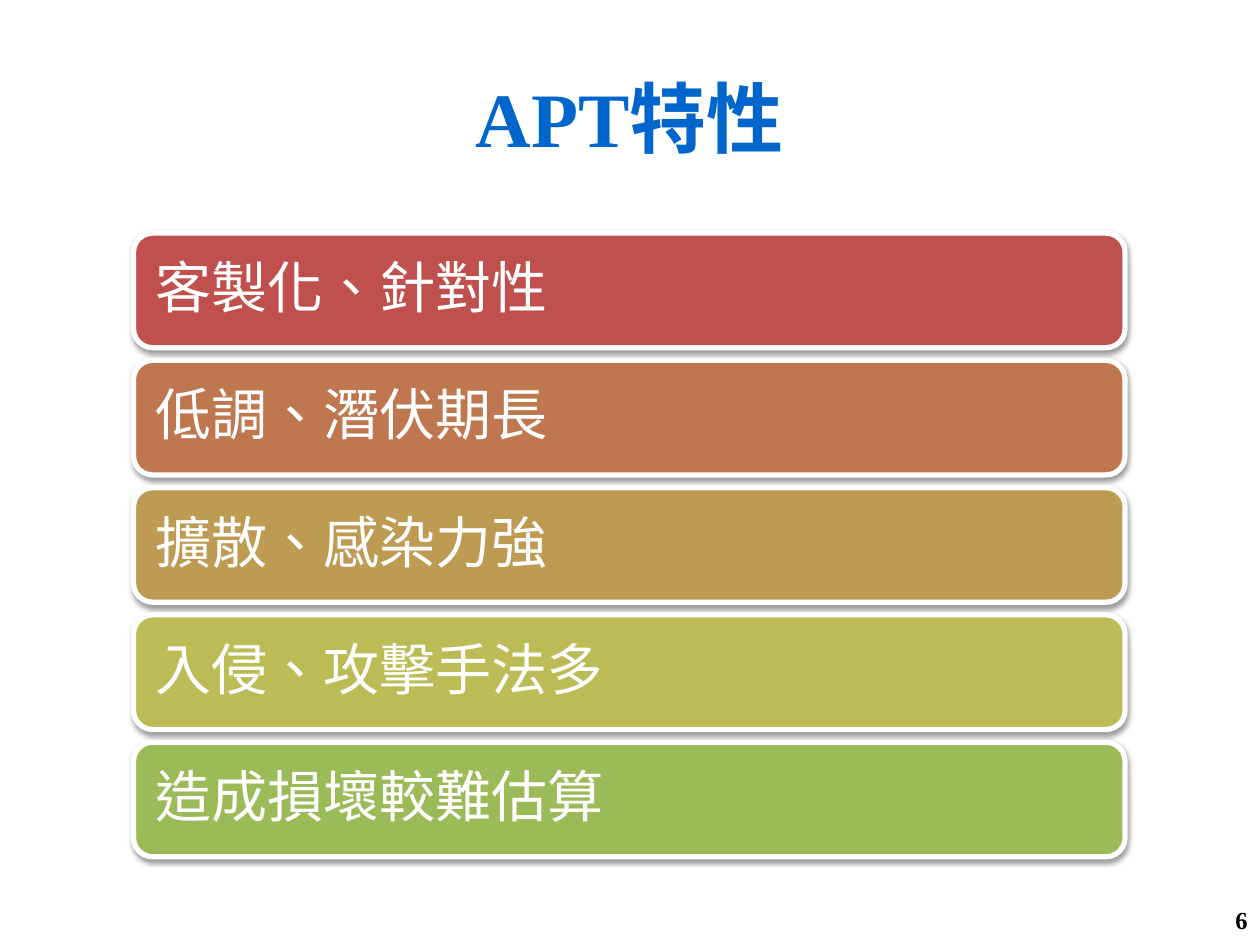
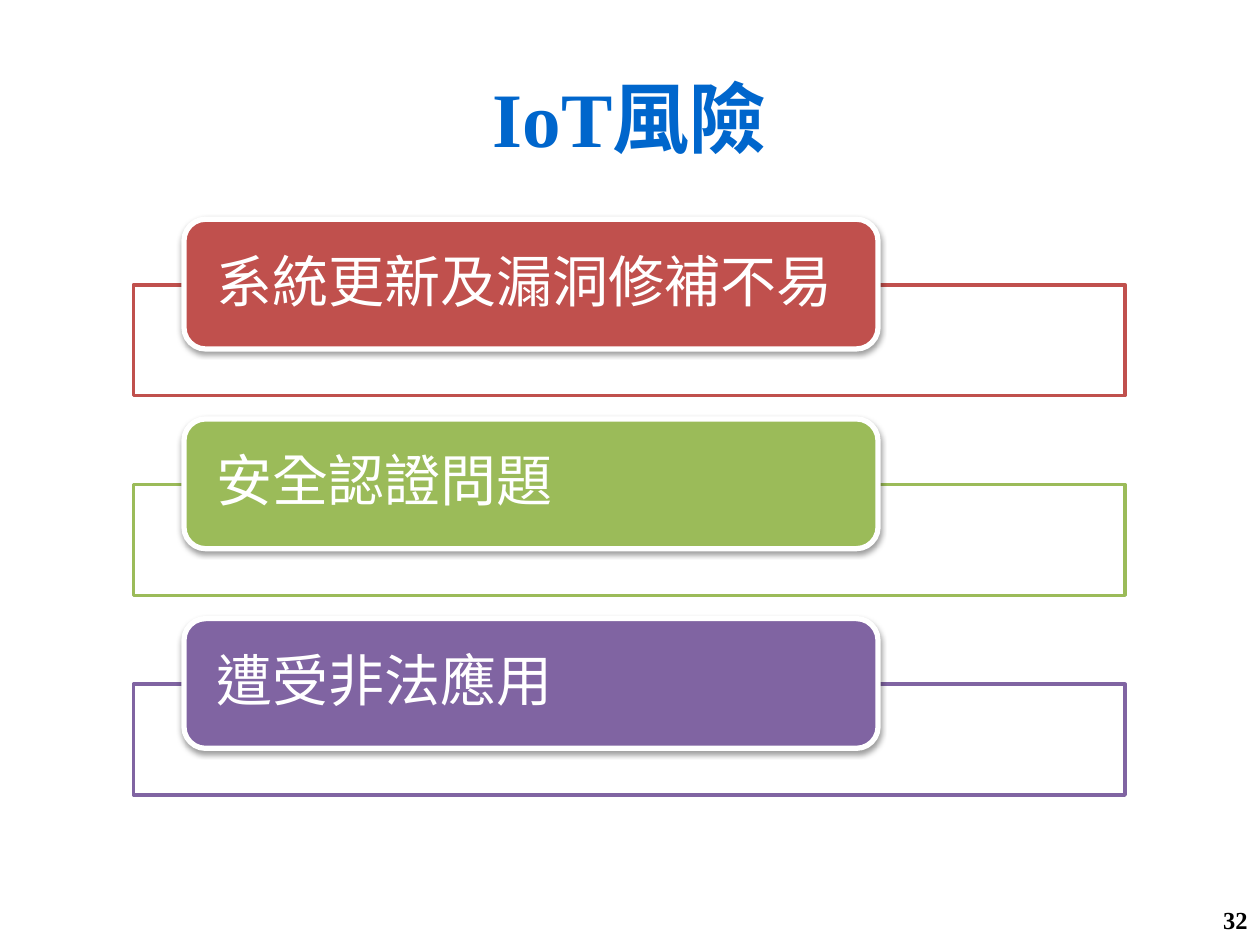
from lxml import etree
from pptx import Presentation
from pptx.dml.color import RGBColor
from pptx.enum.lang import MSO_LANGUAGE_ID
from pptx.enum.shapes import MSO_SHAPE
from pptx.enum.text import MSO_ANCHOR, PP_ALIGN
from pptx.oxml.ns import qn
from pptx.util import Inches, Pt

RECTANGLE = MSO_SHAPE.RECTANGLE
ROUNDED = MSO_SHAPE.ROUNDED_RECTANGLE
LEFT, CENTER, RIGHT = PP_ALIGN.LEFT, PP_ALIGN.CENTER, PP_ALIGN.RIGHT
MIDDLE = MSO_ANCHOR.MIDDLE
CHINESE = MSO_LANGUAGE_ID.TRADITIONAL_CHINESE

FONT = "Times New Roman"
WHITE, BLACK, TITLE_BLUE = "FFFFFF", "000000", "0066CC"
RED, GREEN, PURPLE = "C0504D", "9BBB59", "8064A2"

# Boxes as left, top, width, height in inches
TITLE_BOX = (0.5, 0.3, 9, 1.25)
NUMBER_BOX = (7.67, 7.1, 2.33, 0.4)
TRAITS_BOX = (1.06, 1.85, 7.87, 4.95)
RISKS_BOX = (1.06, 1.74, 7.87, 4.57)

TRAITS = [
    ("客製化、針對性", RED),
    ("低調、潛伏期長", "BF7750"),
    ("擴散、感染力強", "BD9B53"),
    ("入侵、攻擊手法多", "BCBC56"),
    ("造成損壞較難估算", GREEN),
]
RISKS = [
    ("系統更新及漏洞修補不易", RED),
    ("安全認證問題", GREEN),
    ("遭受非法應用", PURPLE),
]


def color(value):
    return RGBColor.from_string(value)


def inches(box):
    return [Inches(length) for length in box]


def write(shape, text, size, text_color, alignment, bold=False, margins=(0.1, 0.05)):
    """Put one vertically centred line of text into a shape."""
    frame = shape.text_frame
    frame.text = text
    frame.word_wrap = True
    frame.vertical_anchor = MIDDLE
    frame.margin_left = frame.margin_right = Inches(margins[0])
    frame.margin_top = frame.margin_bottom = Inches(margins[1])
    paragraph = frame.paragraphs[0]
    paragraph.alignment = alignment
    font = paragraph.runs[0].font
    font.name, font.size, font.bold = FONT, Pt(size), bold
    font.color.rgb = color(text_color)
    font.language_id = CHINESE
    return paragraph


def add_box(slide, kind, box, fill, line, line_width):
    shape = slide.shapes.add_shape(kind, *inches(box))
    shape.shadow.inherit = False
    shape.fill.solid()
    shape.fill.fore_color.rgb = color(fill)
    shape.line.color.rgb = color(line)
    shape.line.width = Pt(line_width)
    return shape


def add_shadow(shape):
    effects = shape._element.spPr.find(qn("a:effectLst"))
    shadow = etree.SubElement(effects, qn("a:outerShdw"), blurRad="40000",
                              dist="20000", dir="5400000", rotWithShape="0")
    shade = etree.SubElement(shadow, qn("a:srgbClr"), val=BLACK)
    etree.SubElement(shade, qn("a:alpha"), val="38000")


def add_label(slide, box, text, fill, margins):
    """White-edged rounded bar with a soft shadow and its text."""
    label = add_box(slide, ROUNDED, box, fill, WHITE, 3)
    add_shadow(label)
    write(label, text, 32, WHITE, LEFT, margins=margins).line_spacing = 0.9


def row_tops(box, row_height, count):
    """Spread rows evenly from the top to the bottom of the box."""
    step = (box[3] - row_height) / (count - 1)
    return [box[1] + step * index for index in range(count)]


def add_trait_bars(slide, box, traits):
    left, _, width, _ = box
    bar_height = 0.91
    for top, (text, fill) in zip(row_tops(box, bar_height, len(traits)), traits):
        add_label(slide, (left, top, width, bar_height), text, fill, (0.13, 0.13))


def add_risk_rows(slide, box, risks):
    left, _, width, _ = box
    frame_drop, frame_height = 0.52, 0.88
    tops = row_tops(box, frame_drop + frame_height, len(risks))
    for top, (text, accent) in zip(tops, risks):
        # Outlined frame behind, label overlapping its top edge
        add_box(slide, RECTANGLE, (left, top + frame_drop, width, frame_height),
                WHITE, accent, 2)
        add_label(slide, (left + 0.4, top, width * 0.7, 1.03), text, accent, (0.21, 0))


def add_slide(presentation, title, number):
    """Blank slide with the shared title and page number."""
    slide = presentation.slides.add_slide(presentation.slide_layouts[6])
    write(slide.shapes.add_textbox(*inches(TITLE_BOX)),
          title, 44, TITLE_BLUE, CENTER, bold=True)
    write(slide.shapes.add_textbox(*inches(NUMBER_BOX)),
          str(number), 14, BLACK, RIGHT, bold=True)
    return slide


def main():
    presentation = Presentation()
    presentation.slide_width = Inches(10)
    presentation.slide_height = Inches(7.5)
    add_trait_bars(add_slide(presentation, "APT特性", 6), TRAITS_BOX, TRAITS)
    add_risk_rows(add_slide(presentation, "IoT風險", 32), RISKS_BOX, RISKS)
    presentation.save("out.pptx")


if __name__ == "__main__":
    main()
